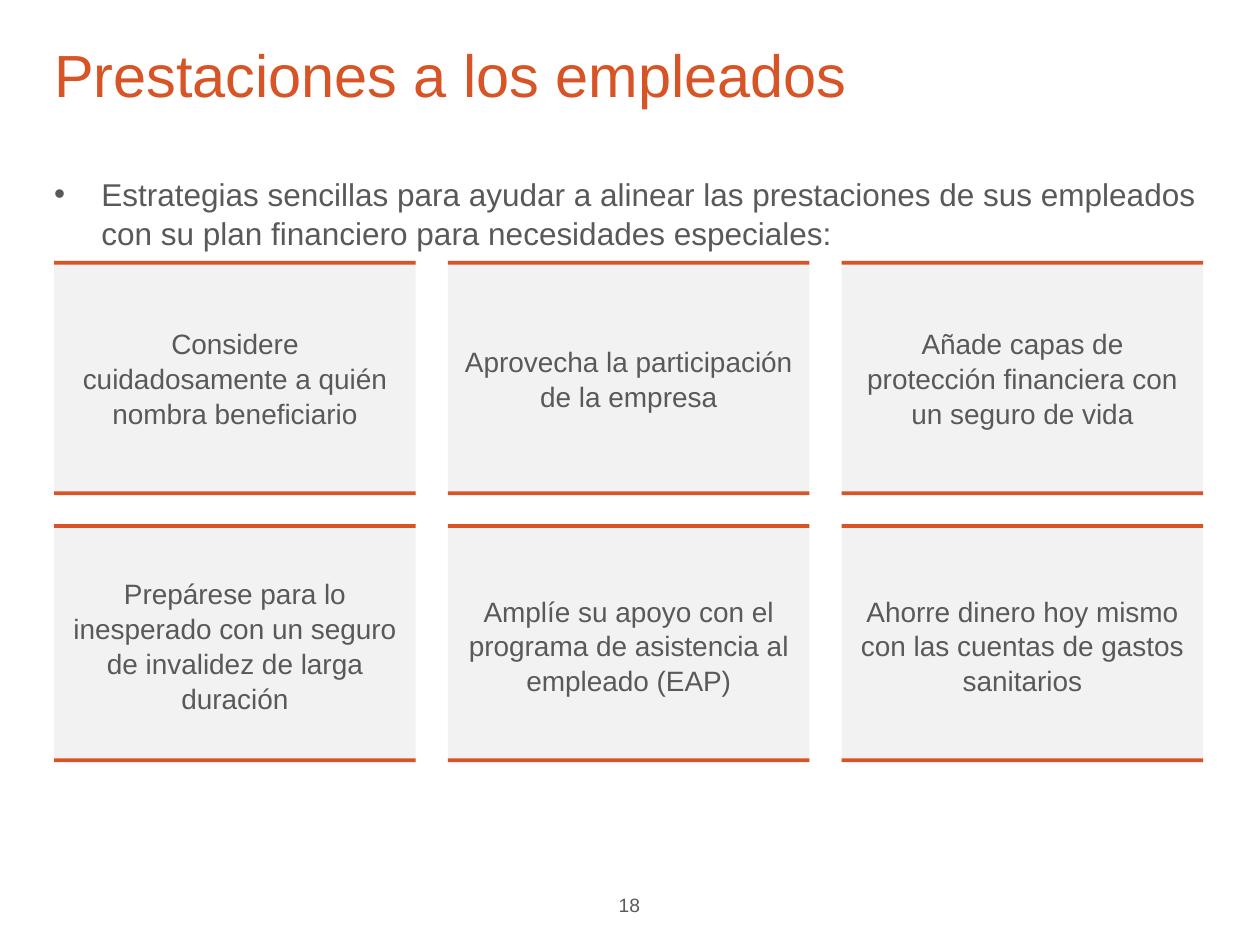
import dataclasses

import pptx
import pptx.dml.color
import pptx.enum.shapes
import pptx.enum.text
import pptx.oxml.ns
import pptx.util
from lxml import etree

Inches = pptx.util.Inches
Align = pptx.enum.text.PP_ALIGN
Anchor = pptx.enum.text.MSO_ANCHOR

ORANGE, GREY, PALE, NUMBER_GREY = "D75426", "595959", "F2F2F2", "5B5B5B"
LEFT, CARD_WIDTH, CARD_HEIGHT, BAR_HEIGHT = 0.43, 2.87, 1.86, 0.03
CONTENT_WIDTH = 9.12
COLUMN_STEP = (CONTENT_WIDTH - CARD_WIDTH) / 2


@dataclasses.dataclass
class CardRow:
    card_top: float
    bar_top: float
    texts: tuple[str, ...]


@dataclasses.dataclass
class TextStyle:
    size: float
    color: str
    align: Align = Align.LEFT
    anchor: Anchor = Anchor.TOP
    line_spacing: float = 1.0
    margins: tuple[float, float, float, float] = (0, 0, 0, 0)


CARD_STYLE = TextStyle(16, GREY, Align.CENTER, Anchor.MIDDLE, 1.04, (0.1, 0.1, 0.1, 0.1))
ROWS = (
    CardRow(2.07, 2.07, (
        "Considere cuidadosamente a quién nombra beneficiario",
        "Aprovecha la participación de la empresa",
        "Añade capas de protección financiera con un seguro de vida",
    )),
    CardRow(4.19, 4.16, (
        "Prepárese para lo inesperado con un seguro de invalidez de larga duración",
        "Amplíe su apoyo con el programa de asistencia al empleado (EAP)",
        "Ahorre dinero hoy mismo con las cuentas de gastos sanitarios",
    )),
)


def rgb(color: str) -> pptx.dml.color.RGBColor:
    return pptx.dml.color.RGBColor.from_string(color)


def set_all(target, values: dict) -> None:
    for name, value in values.items():
        setattr(target, name, value)


def place(shape, left: float, top: float, width: float, height: float) -> None:
    set_all(shape, {"left": Inches(left), "top": Inches(top),
                    "width": Inches(width), "height": Inches(height)})


def write(shape, text: str, style: TextStyle) -> None:
    frame = shape.text_frame
    sides = ("margin_left", "margin_top", "margin_right", "margin_bottom")
    set_all(frame, {"text": text, "word_wrap": True, "vertical_anchor": style.anchor,
                    "auto_size": pptx.enum.text.MSO_AUTO_SIZE.NONE})
    set_all(frame, {side: Inches(margin) for side, margin in zip(sides, style.margins)})
    paragraph = frame.paragraphs[0]
    set_all(paragraph, {"alignment": style.align, "line_spacing": style.line_spacing,
                        "space_before": pptx.util.Pt(0)})
    font = paragraph.runs[0].font
    set_all(font, {"name": "Arial", "size": pptx.util.Pt(style.size)})
    font.color.rgb = rgb(style.color)


def remove_bullet(paragraph) -> None:
    properties = paragraph._p.get_or_add_pPr()
    properties.set("marL", "0")
    properties.set("indent", "0")
    etree.SubElement(properties, pptx.oxml.ns.qn("a:buNone"))


def add_rectangle(slide, left: float, top: float, height: float, color: str):
    shape = slide.shapes.add_shape(
        pptx.enum.shapes.MSO_SHAPE.RECTANGLE,
        Inches(left), Inches(top), Inches(CARD_WIDTH), Inches(height))
    shape.shadow.inherit = False
    shape.fill.solid()
    shape.fill.fore_color.rgb = rgb(color)
    shape.line.fill.background()
    return shape


def add_card_row(slide, row: CardRow) -> None:
    bottom_bar = row.card_top + CARD_HEIGHT - BAR_HEIGHT
    for column, text in enumerate(row.texts):
        left = LEFT + column * COLUMN_STEP
        write(add_rectangle(slide, left, row.card_top, CARD_HEIGHT, PALE), text, CARD_STYLE)
        for top in (row.bar_top, bottom_bar):
            add_rectangle(slide, left, top, BAR_HEIGHT, ORANGE)


def main() -> None:
    presentation = pptx.Presentation()
    set_all(presentation, {"slide_width": Inches(10), "slide_height": Inches(7.5)})
    slide = presentation.slides.add_slide(presentation.slide_layouts[1])

    # Title and introduction
    title, introduction = slide.placeholders
    place(title, LEFT, 0.41, CONTENT_WIDTH, 0.78)
    write(title, "Prestaciones a los empleados",
          TextStyle(34, ORANGE, line_spacing=0.8, margins=(0, 0, 0.1, 0.05)))
    place(introduction, LEFT, 1.37, CONTENT_WIDTH, 0.71)
    remove_bullet(introduction.text_frame.paragraphs[0])
    write(introduction,
          "Estrategias sencillas para ayudar a alinear las prestaciones de sus empleados "
          "con su plan financiero para necesidades especiales:",
          TextStyle(18, GREY, line_spacing=1.05))

    # Strategy cards
    for row in ROWS:
        add_card_row(slide, row)

    # Page number
    number = slide.shapes.add_textbox(Inches(4.68), Inches(7.04), Inches(0.63), Inches(0.46))
    write(number, "18", TextStyle(11, NUMBER_GREY, Align.CENTER, margins=(0.1, 0.05, 0.1, 0.05)))

    presentation.save("out.pptx")


if __name__ == "__main__":
    main()
